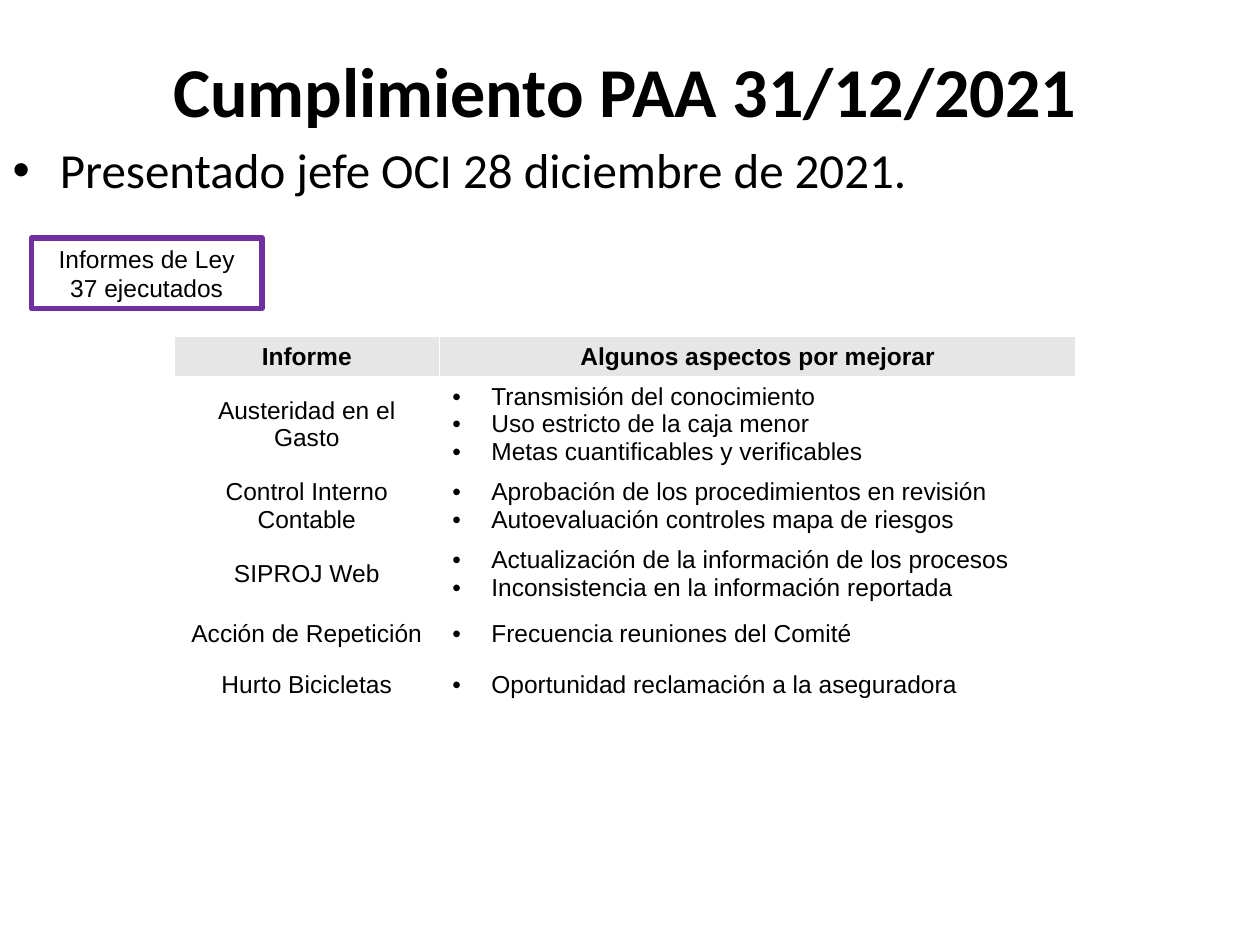
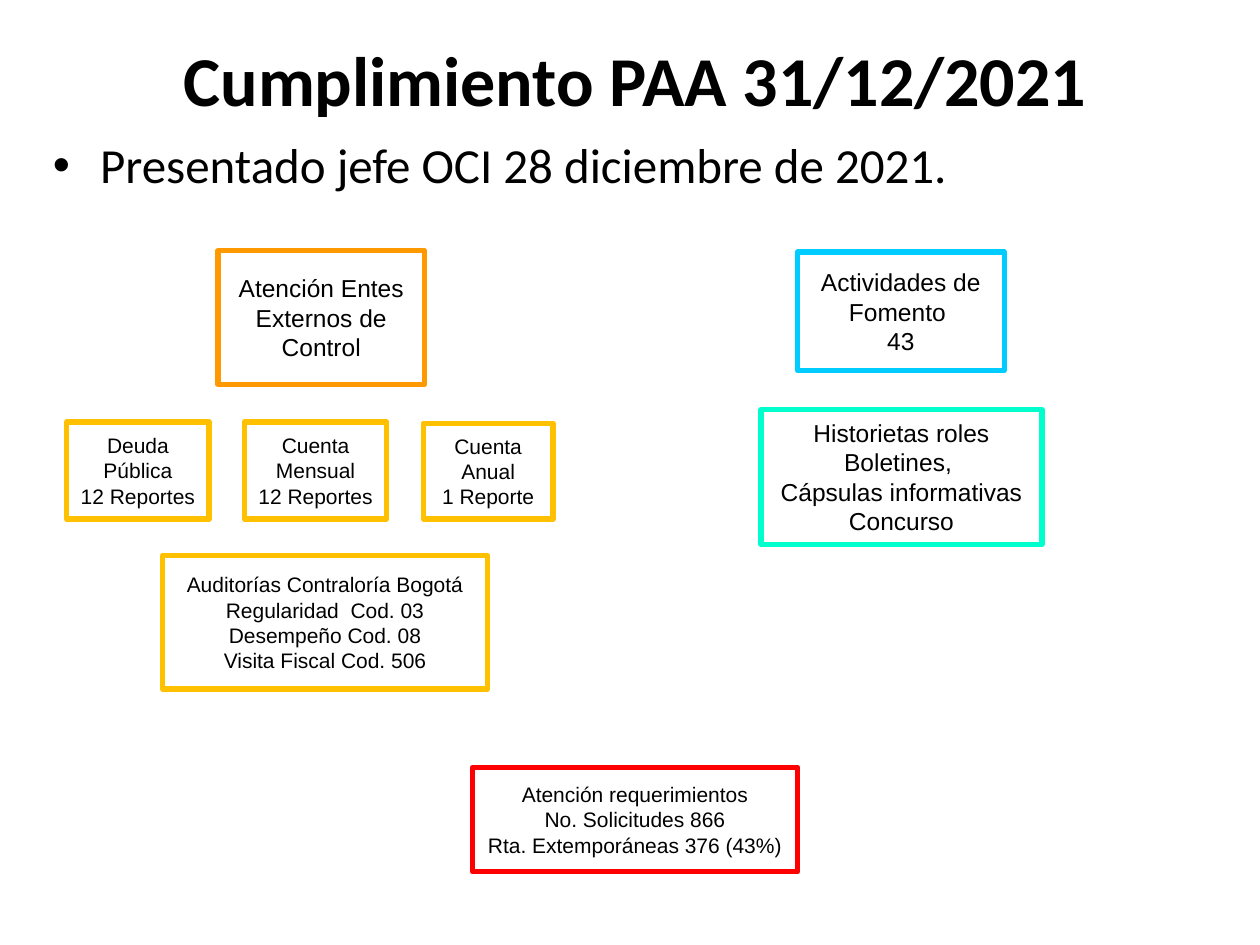
from dataclasses import dataclass
from lxml.etree import SubElement
from pptx import Presentation
from pptx.dml.color import RGBColor
from pptx.enum.shapes import MSO_SHAPE
from pptx.enum.text import MSO_ANCHOR, MSO_AUTO_SIZE, PP_ALIGN
from pptx.oxml.ns import qn
from pptx.util import Inches, Pt


@dataclass(frozen=True)
class Theme:
    ink: str = "000000"
    head: str = "E7E6E6"
    purple: str = "7030A0"
    blue: str = "00CCFF"
    mint: str = "00FFCC"
    orange: str = "FF9900"
    gold: str = "FFC000"
    red: str = "FF0000"
    sans: str = "Calibri"
    plain: str = "Arial"
    title: int = 40
    lead: int = 28
    text: int = 14
    small: int = 12
    edge: int = 3


T = Theme()
TITLE = "Cumplimiento PAA 31/12/2021"
LEAD = "Presentado jefe OCI 28 diciembre de 2021. "
HEADS = ("Informe", "Algunos aspectos por mejorar")
REPORTS = [
    ("Austeridad en el Gasto", [
        "Transmisión del conocimiento",
        "Uso estricto de la caja menor",
        "Metas cuantificables y verificables"], 0.75),
    ("Control Interno Contable", [
        "Aprobación de los procedimientos en revisión",
        "Autoevaluación controles mapa de riesgos"], 0.54),
    ("SIPROJ Web", [
        "Actualización de la información de los procesos",
        "Inconsistencia en la información reportada"], 0.54),
    ("Acción de Repetición", ["Frecuencia reuniones del Comité"], 0.41),
    ("Hurto Bicicletas", ["Oportunidad reclamación a la aseguradora"], 0.41),
]
BOXES = [
    ((6.33, 2, 1.64, 0.94), T.blue, T.text, ["Actividades de Fomento ", "43"]),
    ((6.04, 3.25, 2.23, 1.07), T.mint, T.text,
     ["Historietas roles", "Boletines, ", "Cápsulas informativas Concurso"]),
    ((1.73, 1.99, 1.64, 1.06), T.orange, T.text,
     ["Atención Entes Externos de Control"]),
    ((1.94, 3.35, 1.13, 0.77), T.gold, T.small,
     ["Cuenta Mensual", "12 Reportes"]),
    ((0.53, 3.35, 1.13, 0.77), T.gold, T.small,
     ["Deuda Pública", "12 Reportes"]),
    ((3.36, 3.36, 1.03, 0.76), T.gold, T.small,
     ["Cuenta Anual", "1 Reporte"]),
    ((1.29, 4.41, 2.58, 1.06), T.gold, T.small,
     ["Auditorías Contraloría Bogotá", "Regularidad  Cod. 03",
      "Desempeño Cod. 08", "Visita Fiscal Cod. 506"]),
    ((3.75, 6.09, 2.58, 0.83), T.red, T.small,
     ["Atención requerimientos", "No. Solicitudes 866",
      "Rta. Extemporáneas 376 (43%)"]),
]


def apply(item, **values):
    for name, value in values.items():
        setattr(item, name, value)


def place(shape, left, top, width, height):
    apply(shape, left=Inches(left), top=Inches(top),
          width=Inches(width), height=Inches(height))


def write(frame, lines, size, face=T.plain, bold=False, dots=False, **form):
    frame.text = "\n".join(lines)
    for para in frame.paragraphs:
        if dots:
            add_dot(para)
        apply(para, **form)
        apply(para.font, name=face, size=Pt(size), bold=bold)
        para.font.color.rgb = RGBColor.from_string(T.ink)


def add_dot(para):
    props = para._p.get_or_add_pPr()
    props.set("marL", str(Inches(0.31)))
    props.set("indent", str(-Inches(0.31)))
    tint = SubElement(props, qn("a:buClr"))
    SubElement(tint, qn("a:srgbClr")).set("val", T.ink)
    SubElement(props, qn("a:buFont")).set("typeface", T.plain)
    SubElement(props, qn("a:buChar")).set("char", "•")


def clear_dot(para):
    props = para._p.get_or_add_pPr()
    props.set("marL", "0")
    props.set("indent", "0")
    SubElement(props, qn("a:buNone"))


def add_page(deck, title_at, lead_at):
    page = deck.slides.add_slide(deck.slide_layouts[1])
    title, body = page.placeholders
    place(title, *title_at, 9.92, 1.45)
    place(body, *lead_at, 9.14, 6.19)
    clear_dot(body.text_frame.paragraphs[0])
    shared = {"line_spacing": 0.9, "space_before": Pt(0), "face": T.sans}
    write(title.text_frame, [TITLE], T.title, bold=True,
          alignment=PP_ALIGN.CENTER, **shared)
    write(body.text_frame, [LEAD], T.lead,
          alignment=PP_ALIGN.JUSTIFY, **shared)
    for shape, anchor in ((title, MSO_ANCHOR.MIDDLE), (body, MSO_ANCHOR.TOP)):
        apply(shape.text_frame, auto_size=MSO_AUTO_SIZE.NONE,
              vertical_anchor=anchor)
    return page


def add_box(page, spot, color, size, lines):
    box = page.shapes.add_shape(MSO_SHAPE.RECTANGLE, *map(Inches, spot))
    box.shadow.inherit = False
    box.fill.background()
    box.line.color.rgb = RGBColor.from_string(color)
    box.line.width = Pt(T.edge)
    apply(box.text_frame, word_wrap=True, vertical_anchor=MSO_ANCHOR.MIDDLE)
    write(box.text_frame, lines, size, alignment=PP_ALIGN.CENTER)


def fill_cell(cell, lines, fill=None, **form):
    cell.vertical_anchor = MSO_ANCHOR.MIDDLE
    if fill:
        cell.fill.solid()
        cell.fill.fore_color.rgb = RGBColor.from_string(fill)
    else:
        cell.fill.background()
    write(cell.text_frame, lines, T.text, **form)


def add_grid(page):
    frame = page.shapes.add_table(
        len(REPORTS) + 1, 2, *map(Inches, (1.38, 2.67, 7.16, 2.97)))
    grid = frame.table
    apply(grid, first_row=False, horz_banding=False)
    for col, width in zip(grid.columns, (2.11, 5.05)):
        col.width = Inches(width)
    for cell, head in zip(grid.rows[0].cells, HEADS):
        fill_cell(cell, [head], T.head, bold=True, alignment=PP_ALIGN.CENTER)
    grid.rows[0].height = Inches(0.32)
    for num, (name, points, height) in enumerate(REPORTS, 1):
        grid.rows[num].height = Inches(height)
        fill_cell(grid.cell(num, 0), [name], alignment=PP_ALIGN.CENTER)
        fill_cell(grid.cell(num, 1), points, dots=True)


def main():
    deck = Presentation()
    apply(deck, slide_width=Inches(10), slide_height=Inches(7.5))
    page = add_page(deck, (0, 0.03), (0, 1.11))
    add_box(page, (0.25, 1.89, 1.83, 0.56), T.purple, T.text,
            ["Informes de Ley", "37 ejecutados"])
    add_grid(page)
    page = add_page(deck, (0.08, -0.06), (0.32, 1.07))
    for box in BOXES:
        add_box(page, *box)
    deck.save("out.pptx")


if __name__ == "__main__":
    main()
